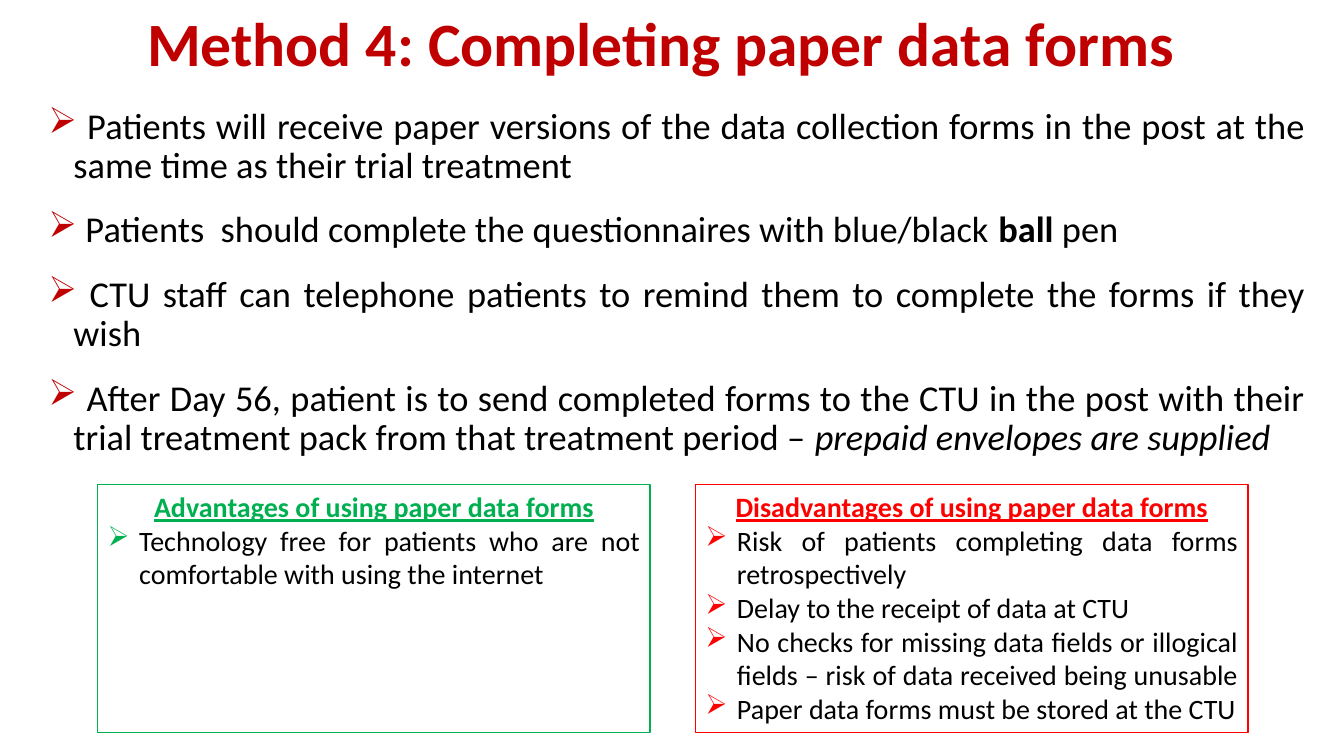
from dataclasses import dataclass

from lxml.etree import SubElement
from pptx import Presentation
from pptx.dml.color import RGBColor
from pptx.enum.shapes import MSO_SHAPE
from pptx.enum.text import MSO_ANCHOR, PP_ALIGN
from pptx.oxml.ns import qn
from pptx.slide import Slide
from pptx.text.text import TextFrame, _Paragraph
from pptx.util import Pt


@dataclass(frozen=True)
class Theme:
    font: str = "Calibri"
    title_size: float = 44
    body_size: float = 26
    box_size: float = 20
    accent: str = "C00000"
    text: str = "000000"
    advantage: str = "00B050"
    disadvantage: str = "FF0000"


@dataclass(frozen=True)
class Span:
    text: str
    bold: bool | None = None
    italic: bool | None = None


@dataclass(frozen=True)
class Box:
    heading: str
    color: str
    points: tuple[str, ...]


THEME = Theme()

TITLE = "Method 4: Completing paper data forms "

STEPS = (
    (Span(" Patients will receive paper versions of the data collection forms "
          "in the post at the same time as their trial treatment "),),
    (Span(" Patients  should complete the questionnaires with blue/black "),
     Span("ball", bold=True), Span(" pen ")),
    (Span(" CTU staff can telephone patients to remind them to complete "
          "the forms if they wish"),),
    (Span(" After Day 56, patient is to send completed forms to the CTU in the "
          "post with their trial treatment pack from that treatment period – "),
     Span("prepaid envelopes are supplied", italic=True)),
)

BOXES = (
    Box("Advantages of using paper data forms", THEME.advantage, (
        "Technology free for patients who are not comfortable with using the internet",
    )),
    Box("Disadvantages of using paper data forms", THEME.disadvantage, (
        "Risk of patients completing data forms retrospectively ",
        "Delay to the receipt of data at CTU",
        "No checks for missing data fields or illogical fields – "
        "risk of data received being unusable ",
        "Paper data forms must be stored at the CTU",
    )),
)

# Box row, in points
BOX_LEFT, BOX_TOP, BOX_WIDTH, BOX_HEIGHT = 69.8, 346.3, 394.6, 177.1
BOX_STEP = 427


def style(paragraph: _Paragraph, size: float, color: str, alignment: PP_ALIGN) -> None:
    paragraph.alignment = alignment
    paragraph.font.name = THEME.font
    paragraph.font.size = Pt(size)
    paragraph.font.color.rgb = RGBColor.from_string(color)


def add_bullet(paragraph: _Paragraph, color: str, indent: float) -> None:
    properties = paragraph._p.get_or_add_pPr()
    properties.set("marL", str(Pt(indent)))
    properties.set("indent", str(Pt(-indent)))
    bullet_color = SubElement(properties, qn("a:buClr"))
    SubElement(bullet_color, qn("a:srgbClr"), val=color)
    SubElement(properties, qn("a:buChar"), char="➢")
    # The schema puts default run properties after the bullet
    properties.append(properties.find(qn("a:defRPr")))


def add_text_frame(slide: Slide, left: float, top: float, width: float,
                   height: float, anchor: MSO_ANCHOR) -> TextFrame:
    shape = slide.shapes.add_textbox(Pt(left), Pt(top), Pt(width), Pt(height))
    shape.text_frame.word_wrap = True
    shape.text_frame.vertical_anchor = anchor
    return shape.text_frame


def next_paragraph(frame: TextFrame, index: int) -> _Paragraph:
    return frame.add_paragraph() if index else frame.paragraphs[0]


def add_title(slide: Slide) -> None:
    frame = add_text_frame(slide, 63.4, 2.2, 828, 61.9, MSO_ANCHOR.MIDDLE)
    paragraph = frame.paragraphs[0]
    paragraph.text = TITLE
    style(paragraph, THEME.title_size, THEME.accent, PP_ALIGN.CENTER)
    paragraph.font.bold = True
    paragraph.line_spacing = 0.9


def add_steps(slide: Slide) -> None:
    frame = add_text_frame(slide, 27.4, 73.4, 913, 263.5, MSO_ANCHOR.TOP)
    for index, spans in enumerate(STEPS):
        paragraph = next_paragraph(frame, index)
        for span in spans:
            run = paragraph.add_run()
            run.text = span.text
            run.font.bold = span.bold
            run.font.italic = span.italic
        style(paragraph, THEME.body_size, THEME.text, PP_ALIGN.JUSTIFY)
        paragraph.line_spacing = 0.9
        paragraph.space_before = Pt(10)
        paragraph.space_after = Pt(8)
        add_bullet(paragraph, THEME.accent, 18)


def add_box(slide: Slide, box: Box, left: float) -> None:
    shape = slide.shapes.add_shape(MSO_SHAPE.RECTANGLE, Pt(left), Pt(BOX_TOP),
                                   Pt(BOX_WIDTH), Pt(BOX_HEIGHT))
    shape.shadow.inherit = False
    shape.fill.background()
    shape.line.color.rgb = RGBColor.from_string(box.color)
    shape.line.width = Pt(1)
    frame = shape.text_frame
    frame.word_wrap = True
    frame.vertical_anchor = MSO_ANCHOR.TOP

    heading = frame.paragraphs[0]
    heading.text = box.heading
    style(heading, THEME.box_size, box.color, PP_ALIGN.CENTER)
    heading.font.bold = True
    heading.font.underline = True

    for point in box.points:
        paragraph = frame.add_paragraph()
        paragraph.text = point
        style(paragraph, THEME.box_size, THEME.text, PP_ALIGN.JUSTIFY)
        add_bullet(paragraph, box.color, 22.5)


def main() -> None:
    presentation = Presentation()
    presentation.slide_width = Pt(960)
    presentation.slide_height = Pt(540)
    slide = presentation.slides.add_slide(presentation.slide_layouts[6])

    # Heading and main bullets
    add_title(slide)
    add_steps(slide)

    # Comparison boxes
    for column, box in enumerate(BOXES):
        add_box(slide, box, BOX_LEFT + column * BOX_STEP)

    presentation.save("out.pptx")


if __name__ == "__main__":
    main()
